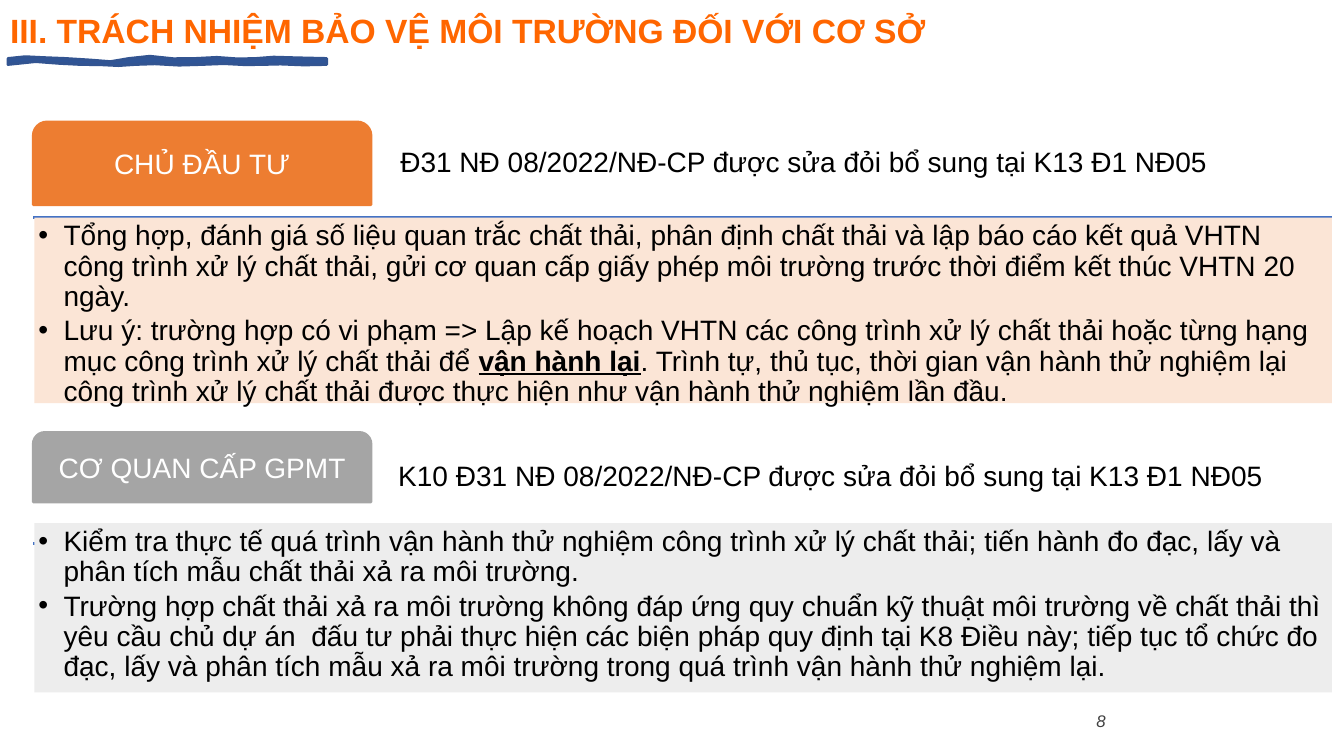
import dataclasses
import pptx
import pptx.dml.color
import pptx.enum.shapes
import pptx.enum.text
import pptx.oxml.ns
import pptx.util

Inches = pptx.util.Inches
Pt = pptx.util.Pt
RGB = pptx.dml.color.RGBColor.from_string
qn = pptx.oxml.ns.qn
ALIGN = pptx.enum.text.PP_ALIGN
ANCHOR = pptx.enum.text.MSO_ANCHOR


@dataclasses.dataclass(frozen=True)
class Theme:
    font: str = "Arial"
    title: str = "FF6600"
    text: str = "000000"
    light: str = "FFFFFF"
    number: str = "404040"
    rule: str = "4472C4"
    wave: str = "2F5597"
    wave_edge: str = "325491"
    owner: str = "ED7D31"
    owner_panel: str = "FBE5D6"
    agency: str = "A5A5A5"
    agency_panel: str = "EDEDED"
    title_size: int = 24
    body_size: int = 20
    number_size: int = 12


THEME = Theme()

TITLE = "III. TRÁCH NHIỆM BẢO VỆ MÔI TRƯỜNG ĐỐI VỚI CƠ SỞ"
SECTIONS = [
    {
        "box": (0.33, 1.21, 12.88, 2.79),
        "tab_height": 0.82, "panel_drop": 0.95, "rule_drop": 0.95,
        "caption_box": (3.6, -0.12, 9.28, 1.07), "caption_inset": 0.04,
        "colors": (THEME.owner, THEME.owner_panel),
        "label": "CHỦ ĐẦU TƯ",
        "caption": "Đ31 NĐ 08/2022/NĐ-CP được sửa đỏi bổ sung tại K13 Đ1 NĐ05",
        "items": [
            ["Tổng hợp, đánh giá số liệu quan trắc chất thải, phân định chất thải và lập báo cáo kết quả VHTN công trình xử lý chất thải, gửi cơ quan cấp giấy phép môi trường trước thời điểm kết thúc VHTN 20 ngày."],
            ["Lưu ý: trường hợp có vi phạm => Lập kế hoạch VHTN các công trình xử lý chất thải hoặc từng hạng mục công trình xử lý chất thải để ",
             "vận hành lại",
             ". Trình tự, thủ tục, thời gian vận hành thử nghiệm lại công trình xử lý chất thải được thực hiện như vận hành thử nghiệm lần đầu."],
        ],
    },
    {
        "box": (0.33, 4.29, 12.88, 2.58),
        "tab_height": 0.69, "panel_drop": 0.9, "rule_drop": 1.1,
        "caption_box": (3.35, 0.09, 9.53, 0.72), "caption_inset": 0.27,
        "colors": (THEME.agency, THEME.agency_panel),
        "label": "CƠ QUAN CẤP GPMT",
        "caption": "K10 Đ31 NĐ 08/2022/NĐ-CP được sửa đỏi bổ sung tại K13 Đ1 NĐ05",
        "items": [
            ["Kiểm tra thực tế quá trình vận hành thử nghiệm công trình xử lý chất thải; tiến hành đo đạc, lấy và phân tích mẫu chất thải xả ra môi trường."],
            ["Trường hợp chất thải xả ra môi trường không đáp ứng quy chuẩn kỹ thuật môi trường về chất thải thì yêu cầu chủ dự án  đấu tư phải thực hiện các biện pháp quy định tại K8 Điều này; tiếp tục tổ chức đo đạc, lấy và phân tích mẫu xả ra môi trường trong quá trình vận hành thử nghiệm lại."],
        ],
    },
]
WAVE = [
    (0, 0.03), (0.19, -0.01, 0.3, 0.03, 0.57, 0.03),
    (0.84, 0.03, 1.02, 0.1, 1.2, 0.03), (1.38, -0.04, 1.66, 0.07, 1.86, 0.03),
    (2.06, -0.01, 2.31, 0.06, 2.46, 0.03), (2.61, 0, 2.83, 0.03, 3.16, 0.03),
    (3.16, 0.05, 3.16, 0.06, 3.16, 0.09), (2.96, 0.11, 2.66, 0.07, 2.52, 0.09),
    (2.39, 0.11, 2.13, 0.06, 1.92, 0.09), (1.72, 0.12, 1.42, 0.06, 1.26, 0.09),
    (1.1, 0.12, 0.93, 0.08, 0.72, 0.09), (0.51, 0.1, 0.3, 0.02, 0, 0.09),
]


def apply(obj, values):
    for name, value in values.items():
        setattr(obj, name, value)


def place(sp, box):
    apply(sp, dict(zip(("left", "top", "width", "height"), map(Inches, box))))


def set_frame(tf, anchor, left=0.1, right=0.1, top=0.05, bottom=0.05):
    apply(tf, {
        "word_wrap": True, "auto_size": pptx.enum.text.MSO_AUTO_SIZE.NONE,
        "vertical_anchor": anchor,
        "margin_left": Inches(left), "margin_right": Inches(right),
        "margin_top": Inches(top), "margin_bottom": Inches(bottom),
    })


def write(p, parts, size, color, align=ALIGN.LEFT, after=0, spacing=0.9, **style):
    apply(p, {"alignment": align, "line_spacing": spacing,
              "space_before": Pt(0), "space_after": Pt(after)})
    for i, text in enumerate(parts):
        r = p.add_run()
        r.text = text
        apply(r.font, {"name": THEME.font, "size": Pt(size), **style})
        if i % 2:
            apply(r.font, {"bold": True, "underline": True})
        r.font.color.rgb = RGB(color)


def add_bullet(p):
    pPr = p._p.get_or_add_pPr()
    pPr.set("marL", str(Inches(0.25)))
    pPr.set("indent", str(Inches(-0.25)))
    for tag, name, value in (("a:buFont", "typeface", THEME.font), ("a:buChar", "char", "•")):
        pPr.append(pPr.makeelement(qn(tag), {name: value}))


def add_wave(s, left, top, steps=3):
    x, y = WAVE[0]
    points = [(x, y)]
    for x1, y1, x2, y2, x3, y3 in WAVE[1:]:
        for t in (step / steps for step in range(1, steps + 1)):
            u = 1 - t
            a, b, c, d = u ** 3, 3 * u * u * t, 3 * u * t * t, t ** 3
            points.append((a * x + b * x1 + c * x2 + d * x3,
                           a * y + b * y1 + c * y2 + d * y3))
        x, y = x3, y3
    points = [(Inches(left + px), Inches(top + py)) for px, py in points]
    fb = s.shapes.build_freeform(*points[0])
    fb.add_line_segments(points[1:], close=True)
    sp = fb.convert_to_shape()
    sp.shadow.inherit = False
    sp.fill.solid()
    sp.fill.fore_color.rgb = RGB(THEME.wave)
    sp.line.color.rgb = RGB(THEME.wave_edge)
    sp.line.width = Pt(2)


def add_header(s, box):
    left, top, width, height = box
    sp = s.shapes.title
    place(sp, box)
    set_frame(sp.text_frame, ANCHOR.BOTTOM)
    write(sp.text_frame.paragraphs[0], [TITLE], THEME.title_size, THEME.title, bold=True)
    add_wave(s, left + 0.08, top + height)


def add_rule(s, body, left, top, width):
    rule = s.shapes.add_connector(pptx.enum.shapes.MSO_CONNECTOR.STRAIGHT,
                                  *map(Inches, (left, top, left + width, top)))
    rule.line.color.rgb = RGB(THEME.rule)
    rule.line.width = Pt(2)
    spPr = rule._element.spPr
    spPr.append(spPr.makeelement(qn("a:effectLst"), {}))
    body._element.addprevious(rule._element)


def add_section(s, body, box, tab_height, panel_drop, rule_drop, caption_box,
                caption_inset, colors, label, caption, items):
    left, top, width, height = box
    tab_color, panel_color = colors
    add_rule(s, body, left, top + rule_drop, width)

    tab = s.shapes.add_shape(pptx.enum.shapes.MSO_SHAPE.ROUND_2_SAME_RECTANGLE,
                             *map(Inches, (left, top, 3.35, tab_height)))
    tab.shadow.inherit = False
    tab.fill.solid()
    tab.fill.fore_color.rgb = tab.line.color.rgb = RGB(tab_color)
    tab.line.width = Pt(2)
    set_frame(tab.text_frame, ANCHOR.MIDDLE, 0.08, 0.08, 0.04, 0.04)
    write(tab.text_frame.paragraphs[0], [label], THEME.body_size, THEME.light, ALIGN.CENTER)

    dx, dy, note_width, note_height = caption_box
    note = s.shapes.add_textbox(*map(Inches, (left + dx, top + dy, note_width, note_height)))
    set_frame(note.text_frame, ANCHOR.MIDDLE, caption_inset, 0.04, 0.04, 0.04)
    write(note.text_frame.paragraphs[0], [caption], THEME.body_size, THEME.text)

    place(body, (left + 0.01, top + panel_drop, width - 0.01, height - panel_drop))
    body.fill.solid()
    body.fill.fore_color.rgb = RGB(panel_color)
    tf = body.text_frame
    set_frame(tf, ANCHOR.TOP, 0.04, 0.04, 0.04, 0.04)
    for i, parts in enumerate(items):
        p = tf.add_paragraph() if i else tf.paragraphs[0]
        add_bullet(p)
        write(p, parts, THEME.body_size, THEME.text, after=3)


def add_number(s, box):
    sp = s.shapes.add_textbox(*map(Inches, box))
    set_frame(sp.text_frame, ANCHOR.MIDDLE)
    write(sp.text_frame.paragraphs[0], ["8"], THEME.number_size, THEME.number,
          ALIGN.CENTER, spacing=1.0, italic=True)


def main():
    prs = pptx.Presentation()
    apply(prs, {"slide_width": Inches(13.33), "slide_height": Inches(7.5)})
    s = prs.slides.add_slide(prs.slide_layouts.get_by_name("Two Content"))
    add_header(s, (0, -0.05, 13.33, 0.6))
    for idx, section in enumerate(SECTIONS, 1):
        add_section(s, s.placeholders[idx], **section)
    add_number(s, (9.42, 6.95, 3, 0.4))
    prs.save("out.pptx")


if __name__ == "__main__":
    main()
